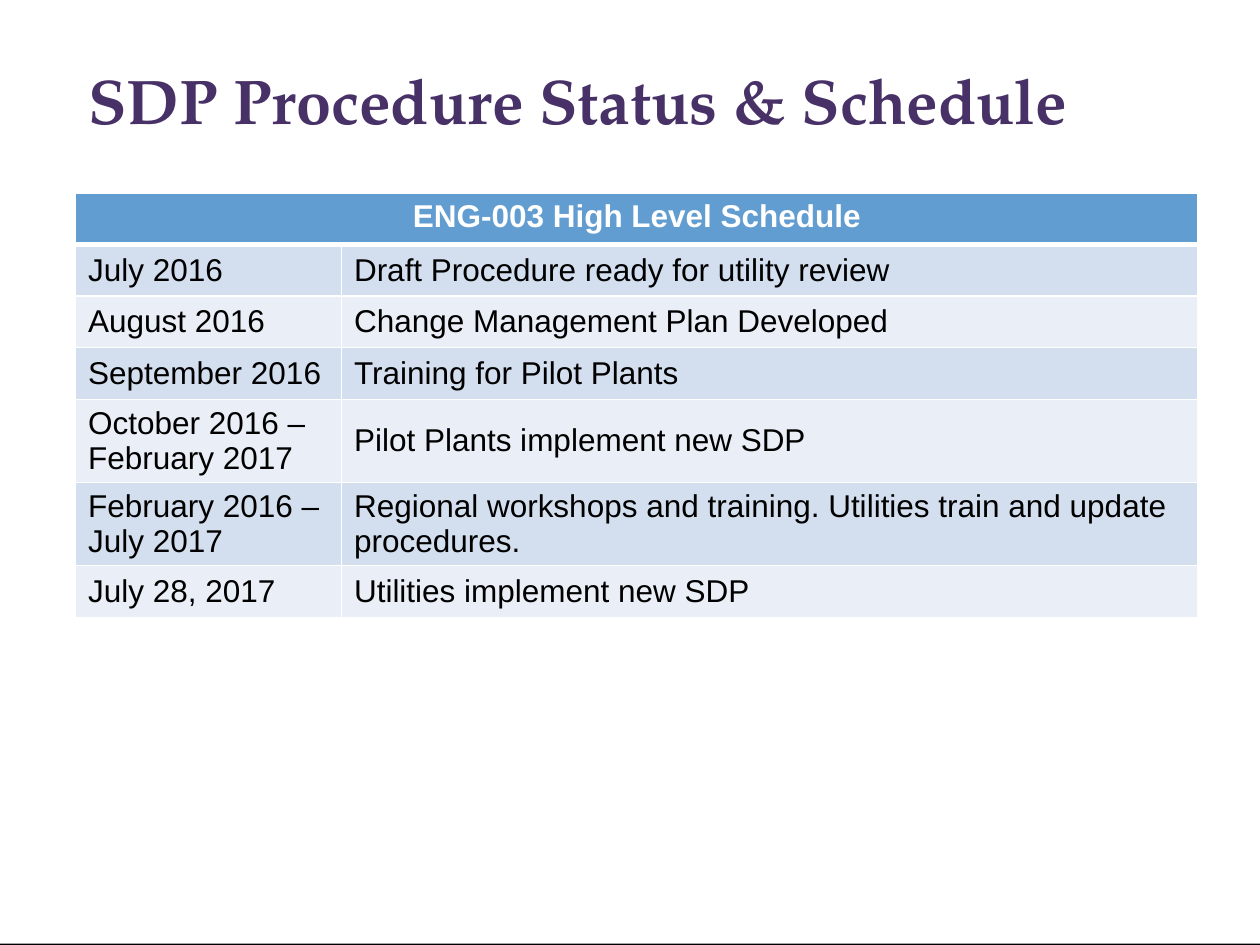
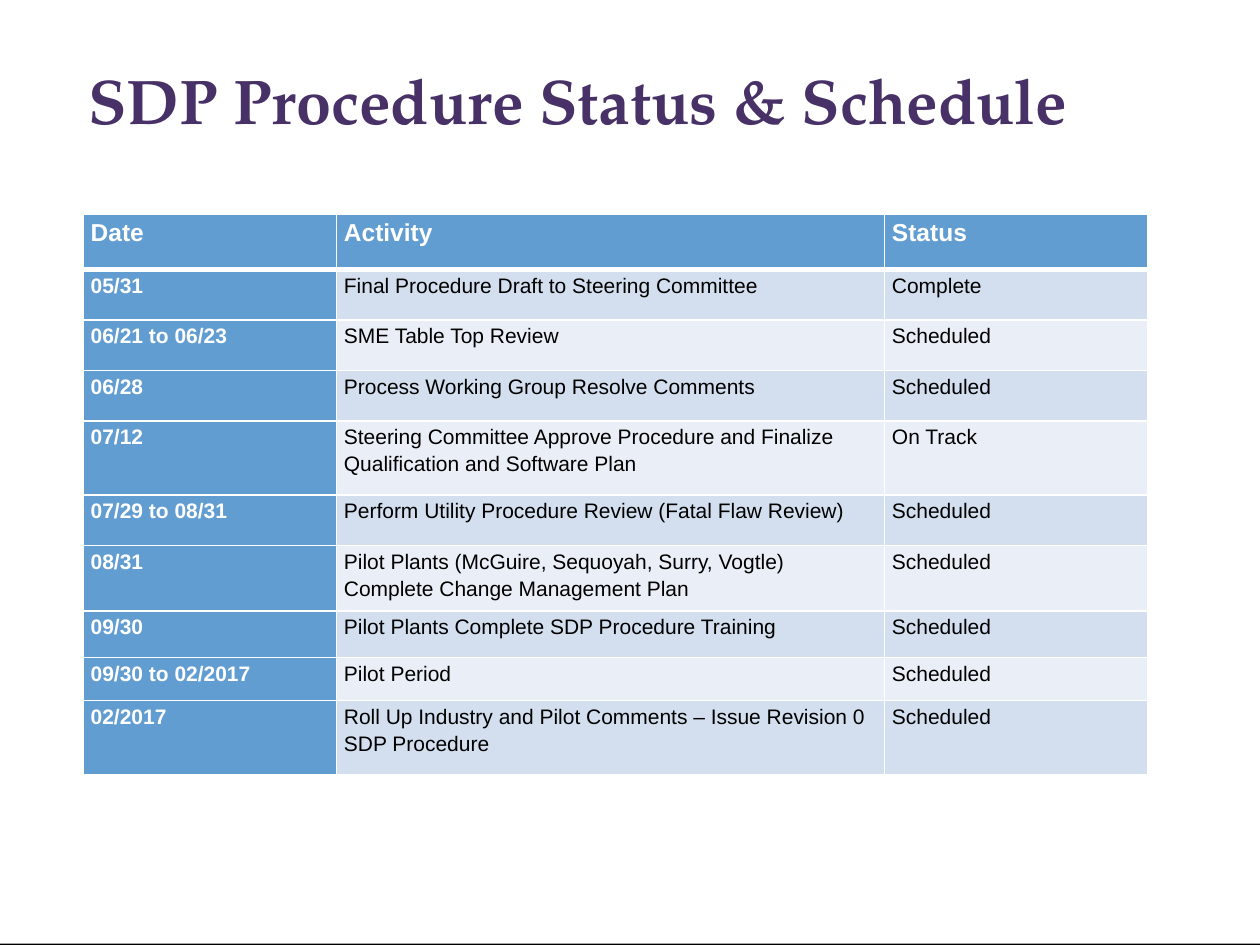
"""Build two slides on the status and schedule of the SDP procedure."""
from lxml import etree
from pptx import Presentation
from pptx.dml.color import RGBColor
from pptx.enum.shapes import MSO_SHAPE
from pptx.enum.text import MSO_ANCHOR, MSO_AUTO_SIZE, PP_ALIGN
from pptx.oxml.ns import qn
from pptx.util import Inches, Pt

RECT = MSO_SHAPE.RECTANGLE
TOP, MIDDLE, BOTTOM = MSO_ANCHOR.TOP, MSO_ANCHOR.MIDDLE, MSO_ANCHOR.BOTTOM
LEFT, CENTER = PP_ALIGN.LEFT, PP_ALIGN.CENTER
NO_FIT = MSO_AUTO_SIZE.NONE

WHITE = RGBColor(0xFF, 0xFF, 0xFF)
BLACK = RGBColor(0x00, 0x00, 0x00)
PURPLE = RGBColor(0x47, 0x31, 0x67)
BLUE = RGBColor(0x62, 0x9D, 0xD1)
BANDS = (RGBColor(0xD3, 0xDF, 0xEE), RGBColor(0xEA, 0xEF, 0xF7))

TITLE = "SDP Procedure Status & Schedule"
TITLE_FONT = {"name": "TeX Gyre Pagella", "size": Pt(36), "bold": True}
BODY = "Arial"

PLAN = [
    ("ENG-003 High Level Schedule", ""),
    ("July 2016", "Draft Procedure ready for utility review"),
    ("August 2016", "Change Management Plan Developed"),
    ("September 2016", "Training for Pilot Plants"),
    ("October 2016 – February 2017", "Pilot Plants implement new SDP"),
    ("February 2016 – July 2017",
     "Regional workshops and training. Utilities train and update procedures."),
    ("July 28, 2017", "Utilities implement new SDP"),
]
STEPS = [
    ("Date", "Activity", "Status"),
    ("05/31", "Final Procedure Draft to Steering Committee", "Complete"),
    ("06/21 to 06/23", "SME Table Top Review", "Scheduled"),
    ("06/28", "Process Working Group Resolve Comments", "Scheduled"),
    ("07/12", "Steering Committee Approve Procedure and Finalize "
     "Qualification and Software Plan", "On Track"),
    ("07/29 to 08/31", "Perform Utility Procedure Review (Fatal Flaw Review)",
     "Scheduled"),
    ("08/31", "Pilot Plants (McGuire, Sequoyah, Surry, Vogtle) "
     "Complete Change Management Plan", "Scheduled"),
    ("09/30", "Pilot Plants Complete SDP Procedure Training", "Scheduled"),
    ("09/30 to 02/2017", "Pilot Period", "Scheduled"),
    ("02/2017", "Roll Up Industry and Pilot Comments – Issue Revision 0 "
     "SDP Procedure", "Scheduled"),
]
STEP_ROWS = (0.44, 0.4, 0.4, 0.4, 0.59, 0.4, 0.52, 0.37, 0.34, 0.59)
STEP_PAD = {"margin_left": Inches(0.06), "margin_top": Inches(0.01),
            "margin_right": Inches(0.06), "margin_bottom": 0}
STEP_GAP = {"line_spacing": 1.15, "space_after": Pt(10)}


def style(item, values):
    """Set each named value on an item."""
    for name, value in values.items():
        setattr(item, name, value)


def paint(item, color):
    """Give an item a solid fill."""
    item.fill.solid()
    item.fill.fore_color.rgb = color


def add_panel(layout, slide):
    """Put the white panel at the back of the layout."""
    panel = slide.shapes.add_shape(RECT, 0, 0, Inches(10), Inches(7.49))
    panel.shadow.inherit = False
    paint(panel, WHITE)
    panel.line.fill.background()
    layout.shapes.element.insert(2, panel.element)


def add_title(slide):
    """Place and format the slide title."""
    title = slide.shapes.title
    style(title, {"left": Inches(0.6), "top": Inches(0.14),
                  "width": Inches(8.25), "height": Inches(1)})
    frame = title.text_frame
    style(frame, {"text": TITLE, "vertical_anchor": BOTTOM,
                  "word_wrap": True, "auto_size": NO_FIT})
    line = frame.paragraphs[0]
    line.alignment = LEFT
    style(line.font, TITLE_FONT)
    line.font.color.rgb = PURPLE


def add_edges(cell, head):
    """Draw white cell borders, with a thick one below the head."""
    props = cell._tc.get_or_add_tcPr()
    for spot, side in enumerate("LRTB"):
        width = Pt(3 if head and side == "B" else 1)
        edge = etree.Element(qn("a:ln" + side), w=str(width))
        solid = etree.SubElement(edge, qn("a:solidFill"))
        etree.SubElement(solid, qn("a:srgbClr"), val=str(WHITE))
        props.insert(spot, edge)


def fill_cell(cell, text, size, fill, strong, head):
    """Write and color one cell."""
    cell.text = text
    paint(cell, fill)
    font = cell.text_frame.paragraphs[0].font
    style(font, {"name": BODY, "size": Pt(size), "bold": strong})
    font.color.rgb = WHITE if strong else BLACK
    add_edges(cell, head)


def add_table(slide, data, left, top, cols, rows, sizes, lead=False):
    """Add a banded table with a blue head and perhaps a blue lead column."""
    table = slide.shapes.add_table(
        len(rows), len(cols), Inches(left), Inches(top),
        Inches(sum(cols)), Inches(sum(rows))).table
    table.first_col = lead
    for col, width in zip(table.columns, cols):
        col.width = Inches(width)
    for row, height in zip(table.rows, rows):
        row.height = Inches(height)
    for r, texts in enumerate(data):
        head = r == 0
        for c, text in enumerate(texts):
            strong = head or (lead and c == 0)
            fill = BLUE if strong else BANDS[(r - 1) % 2]
            fill_cell(table.cell(r, c), text, sizes[0 if head else 1],
                      fill, strong, head)
    return table


def add_plan(slide):
    """Add the high level schedule."""
    table = add_table(slide, PLAN, 0.6, 1.53, (2.11, 6.8),
                      [0.41] * len(PLAN), (18, 18))
    first = table.cell(0, 0)
    first.merge(table.cell(0, 1))
    first.text_frame.paragraphs[0].alignment = CENTER
    for r in range(1, len(PLAN)):
        for c in range(2):
            table.cell(r, c).vertical_anchor = MIDDLE


def add_steps(slide):
    """Add the list of activities and their status."""
    table = add_table(slide, STEPS, 0.66, 1.7, (2.01, 4.35, 2.09),
                      STEP_ROWS, (14, 12), lead=True)
    for cell in table.iter_cells():
        style(cell, {"vertical_anchor": TOP, **STEP_PAD})
        style(cell.text_frame.paragraphs[0], STEP_GAP)


def main():
    """Build and save the slides."""
    deck = Presentation()
    deck.slide_width, deck.slide_height = Inches(10), Inches(7.5)
    paint(deck.slide_master.background, BLACK)
    layout = deck.slide_layouts[5]
    slides = [deck.slides.add_slide(layout) for _ in range(2)]
    add_panel(layout, slides[0])
    for slide, build in zip(slides, (add_plan, add_steps)):
        add_title(slide)
        build(slide)
    deck.save("out.pptx")


if __name__ == "__main__":
    main()
